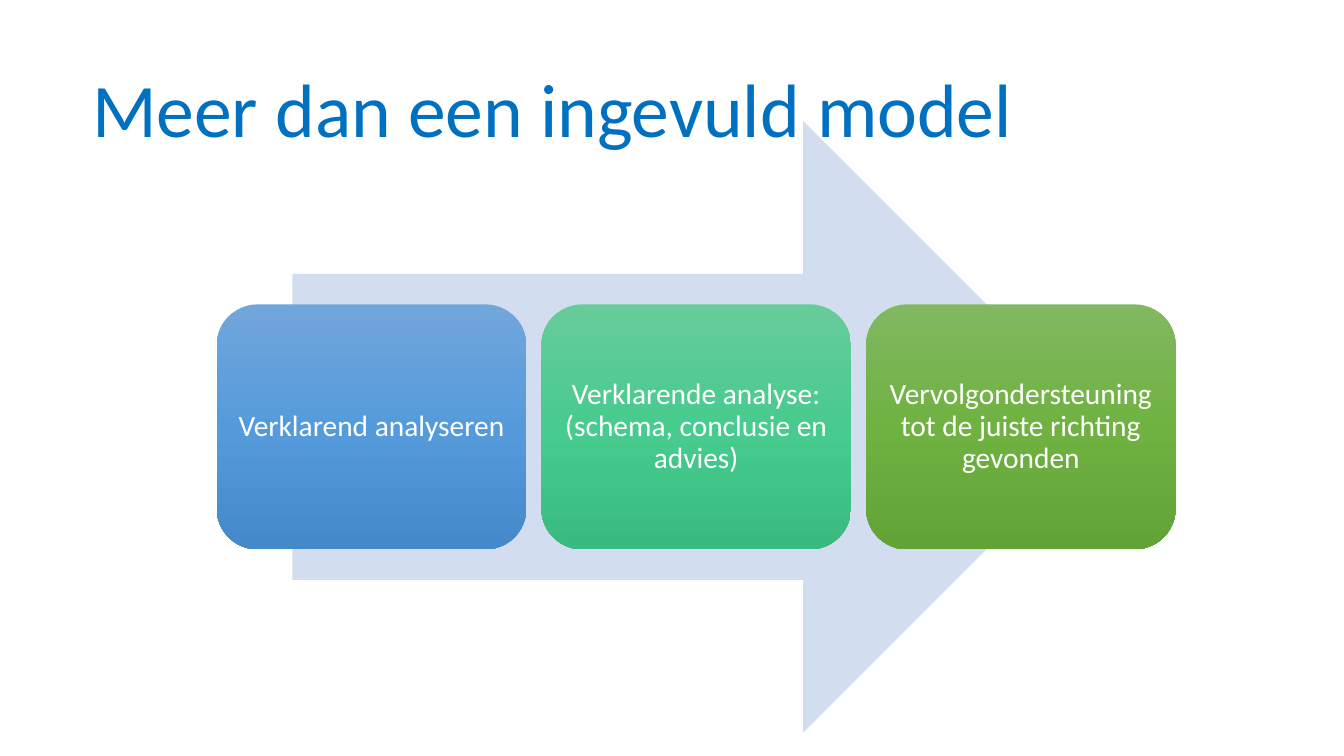
from copy import deepcopy

from pptx import Presentation
from pptx.dml.color import RGBColor
from pptx.enum.shapes import MSO_SHAPE
from pptx.enum.text import MSO_ANCHOR, MSO_AUTO_SIZE, PP_ALIGN
from pptx.oxml.ns import qn
from pptx.util import Inches, Pt

STEPS = [
    ("Verklarend analyseren", ("71A6DB", "559BDB", "448ACA")),
    ("Verklarende analyse: (schema, conclusie en advies)", ("67CC9A", "47CB8E", "39BB7F")),
    ("Vervolgondersteuning tot de juiste richting gevonden", ("81B861", "6FB242", "62A336")),
]
STEP_LEFT, STEP_TOP, STEP_WIDTH, STEP_HEIGHT = 2.15, 3.02, 3.07, 2.43
STEP_GAP = 0.15


def rgb(color):
    return RGBColor.from_string(color)


def write(sp, text, size, color, anchor=MSO_ANCHOR.MIDDLE, inset=None):
    tf = sp.text_frame
    tf.word_wrap = True
    tf.auto_size = MSO_AUTO_SIZE.NONE
    tf.vertical_anchor = anchor
    if inset is not None:
        tf.margin_left = tf.margin_right = Inches(inset)
        tf.margin_top = tf.margin_bottom = Inches(inset)
    p = tf.paragraphs[0]
    p.alignment = PP_ALIGN.CENTER
    p.line_spacing = 0.9
    r = p.add_run()
    r.text = text
    r.font.name = "Calibri"
    r.font.size = Pt(size)
    r.font.color.rgb = rgb(color)


def add_title(s, text):
    sp = s.shapes.title
    sp.left, sp.top = Inches(0.48), Inches(0)
    sp.width, sp.height = Inches(10), Inches(1.58)
    write(sp, text, 54, "0070C0", anchor=MSO_ANCHOR.BOTTOM)


def add_plain_shape(s, kind, left, top, width, height):
    sp = s.shapes.add_shape(kind, Inches(left), Inches(top), Inches(width), Inches(height))
    sp.shadow.inherit = False
    sp.line.fill.background()
    return sp


def add_arrow(s):
    sp = add_plain_shape(s, MSO_SHAPE.RIGHT_ARROW, 2.9, 1.2, 8.1, 6.07)
    sp.fill.solid()
    sp.fill.fore_color.rgb = rgb("D2DEEF")


def fill_gradient(sp, colors):
    sp.fill.gradient()
    sp.fill.gradient_angle = 270
    stop_list = sp._element.spPr.find(qn("a:gradFill")).find(qn("a:gsLst"))
    stop_list.append(deepcopy(stop_list[-1]))
    for stop, color, position in zip(sp.fill.gradient_stops, colors, (0, 0.5, 1)):
        stop.color.rgb = rgb(color)
        stop.position = position


def add_step(s, index, text, colors):
    left = STEP_LEFT + index * (STEP_WIDTH + STEP_GAP)
    sp = add_plain_shape(s, MSO_SHAPE.ROUNDED_RECTANGLE, left, STEP_TOP, STEP_WIDTH, STEP_HEIGHT)
    fill_gradient(sp, colors)
    write(sp, text, 21, "FFFFFF", inset=0.09)


def main():
    prs = Presentation()
    prs.slide_width, prs.slide_height = Inches(13.33), Inches(7.5)
    s = prs.slides.add_slide(prs.slide_layouts[5])
    add_title(s, "Meer dan een ingevuld model")
    add_arrow(s)
    for index, (text, colors) in enumerate(STEPS):
        add_step(s, index, text, colors)
    prs.save("out.pptx")


if __name__ == "__main__":
    main()
